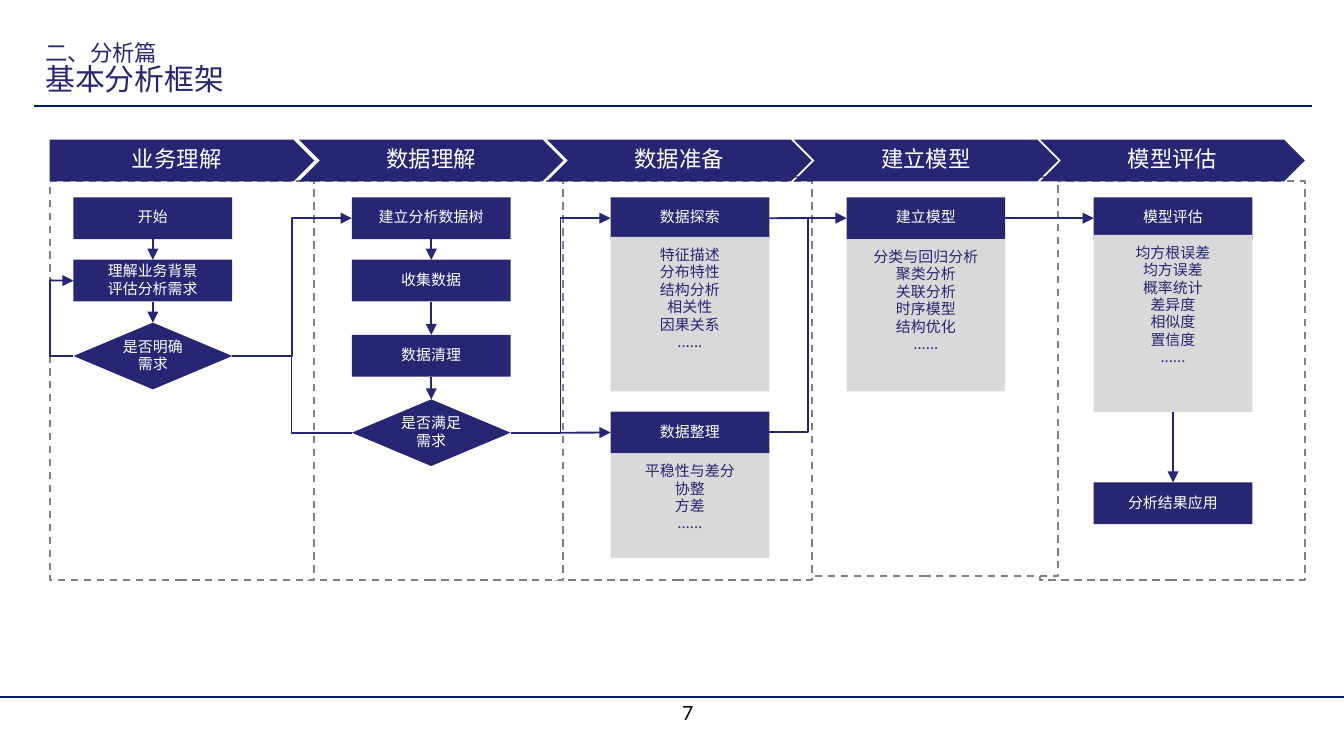
from lxml import etree
from pptx import Presentation
from pptx.dml.color import RGBColor
from pptx.enum import dml, shapes, text
from pptx.oxml.ns import qn
from pptx.util import Cm, Pt

NAVY = RGBColor(0x26, 0x26, 0x73)
RULE = RGBColor(0x00, 0x20, 0x60)
DASH = RGBColor(0x80, 0x80, 0x80)
PANEL = RGBColor(0xD9, 0xD9, 0xD9)
WHITE = RGBColor(0xFF, 0xFF, 0xFF)
BLACK = RGBColor(0x00, 0x00, 0x00)
FONT = "Noto Sans CJK SC"
RECTANGLE = shapes.MSO_SHAPE.RECTANGLE
DIAMOND = shapes.MSO_SHAPE.DIAMOND
TOP, LEFT, BOTTOM, RIGHT = range(4)

TITLE = [("二、分析篇", 12), ("基本分析框架", 16)]
RULES = [(0, 25.4, 13.18), (0.64, 24.79, 2)]

STAGES = [
    ("业务理解", 0.94, 3.43, 1.39),
    ("数据理解", 5.65, 3.43, 6.65),
    ("数据准备", 10.34, 3.43, 11.54),
    ("建立模型", 15, 3.35, 16),
    ("模型评估", 19.66, 3.43, 20.67),
]
STAGE_WIDTH, STAGE_TOP, FRAME_HEIGHT = 5, 2.64, 7.54
STEP_WIDTH, STEP_HEIGHT, DECISION_HEIGHT = 3, 0.79, 1.26

STEPS = {
    "start": (0, 3.73, ["开始"]),
    "background": (0, 4.91, ["理解业务背景", "评估分析需求"]),
    "tree": (1, 3.73, ["建立分析数据树"]),
    "collect": (1, 4.91, ["收集数据"]),
    "clean": (1, 6.33, ["数据清理"]),
    "explore": (2, 3.73, ["数据探索"]),
    "tidy": (2, 7.78, ["数据整理"]),
    "model": (3, 3.73, ["建立模型"]),
    "evaluate": (4, 3.73, ["模型评估"]),
    "apply": (4, 9.12, ["分析结果应用"]),
}
DECISIONS = {
    "clear": (0, 6.1, ["是否明确", "需求"]),
    "enough": (1, 7.55, ["是否满足", "需求"]),
}
DETAILS = {
    "explore list": (2, 4.48, 2.92, ["特征描述", "分布特性", "结构分析", "相关性", "因果关系", "......"]),
    "tidy list": (2, 8.57, 1.98, ["平稳性与差分", "协整", "方差", "......"]),
    "model list": (3, 4.52, 2.88, ["分类与回归分析", "聚类分析", "关联分析", "时序模型", "结构优化", "......"]),
    "evaluate list": (4, 4.44, 3.35, ["均方根误差", "均方误差", "概率统计", "差异度", "相似度", "置信度", "......"]),
}

LOOP, FORK, SPLIT = (0.94, 5.3), (5.51, 6.73), (10.59, 8.18)
FLOWS = [
    ("start", BOTTOM, "background", TOP),
    ("background", BOTTOM, "clear", TOP),
    ("tree", BOTTOM, "collect", TOP),
    ("collect", BOTTOM, "clean", TOP),
    ("clean", BOTTOM, "enough", TOP),
    ("model", RIGHT, "evaluate", LEFT),
    ("evaluate list", BOTTOM, "apply", TOP),
    (LOOP, None, "background", LEFT),
    (SPLIT, None, "tidy", LEFT),
]
ELBOWS = [
    ("clear", RIGHT, "tree", LEFT),
    ("enough", RIGHT, "explore", LEFT),
    ("tidy", RIGHT, "model", LEFT),
]
CORNERS = [(LOOP, None, "clear", LEFT), (FORK, None, "enough", LEFT)]


def style(paragraph, size, color, name=FONT):
    font = paragraph.font
    font.name, font.size, font.color.rgb = name, Pt(size), color
    properties = paragraph._p.pPr.find(qn("a:defRPr"))
    etree.SubElement(properties, qn("a:ea"), typeface=name)


def add_block(kind, left, top, width, height, lines=(), fill=NAVY, color=WHITE,
              size=8, inset=0, anchor=text.MSO_ANCHOR.MIDDLE):
    shape = slide.shapes.add_shape(kind, Cm(left), Cm(top), Cm(width), Cm(height))
    shape.shadow.inherit = False
    shape.fill.solid()
    shape.fill.fore_color.rgb = fill
    shape.line.fill.background()
    frame = shape.text_frame
    frame.margin_left = frame.margin_right = Cm(inset)
    frame.margin_top = frame.margin_bottom = Cm(inset)
    frame.vertical_anchor = anchor
    for index, line in enumerate(lines):
        paragraph = frame.add_paragraph() if index else frame.paragraphs[0]
        paragraph.text = line
        paragraph.alignment = text.PP_ALIGN.CENTER
        paragraph.line_spacing = 0.9
        if index:
            paragraph.space_before = Pt(0.7)
        style(paragraph, size, color)
    return shape


def add_textbox(left, top, width, height):
    frame = slide.shapes.add_textbox(Cm(left), Cm(top), Cm(width), Cm(height)).text_frame
    frame.word_wrap = True
    frame.vertical_anchor = text.MSO_ANCHOR.BOTTOM
    return frame.paragraphs[0]


def add_line(start, end, kind=shapes.MSO_CONNECTOR.STRAIGHT, color=NAVY, arrow=False):
    line = slide.shapes.add_connector(kind, *map(Cm, start + end))
    line.line.color.rgb = color
    line.line.width = Pt(1)
    if arrow:
        etree.SubElement(line.line._get_or_add_ln(), qn("a:tailEnd"), type="triangle")
    etree.SubElement(line._element.spPr, qn("a:effectLst"))
    return line


def add_flow(source, source_side, target, target_side, **options):
    start = (0, 0) if source in blocks else source
    line = add_line(start, (1, 1), **options)
    if source in blocks:
        line.begin_connect(blocks[source], source_side)
    line.end_connect(blocks[target], target_side)
    return line


presentation = Presentation()
presentation.slide_width, presentation.slide_height = Cm(25.4), Cm(14.29)
slide = presentation.slides.add_slide(presentation.slide_layouts[6])

for left, right, height in RULES:
    add_line((left, height), (right, height), color=RULE)

for name, left, top, step_left in reversed(STAGES):
    frame = add_block(RECTANGLE, left, top, STAGE_WIDTH, FRAME_HEIGHT, fill=WHITE)
    frame.line.color.rgb = DASH
    frame.line.width = Pt(1)
    frame.line.dash_style = dml.MSO_LINE.DASH

title = add_textbox(0.61, 0.38, 21.13, 1.57)
title.line_spacing = 0.85
style(title, 16, NAVY)
for index, (words, size) in enumerate(TITLE):
    if index:
        title.add_line_break()
    run = title.add_run()
    run.text = words
    run.font.size = Pt(size)

page_number = add_textbox(10.36, 13.18, 5.28, 0.64)
page_number.text = "7"
page_number.alignment = text.PP_ALIGN.CENTER
style(page_number, 10.5, BLACK, "Lato")

for index, (name, left, top, step_left) in enumerate(STAGES):
    kind = shapes.MSO_SHAPE.CHEVRON if index else shapes.MSO_SHAPE.PENTAGON
    add_block(kind, left, STAGE_TOP, STAGE_WIDTH, STEP_HEIGHT, [name], size=12)

blocks = {}
for group, kind, height in ((STEPS, RECTANGLE, STEP_HEIGHT), (DECISIONS, DIAMOND, DECISION_HEIGHT)):
    for key, (stage, top, lines) in group.items():
        blocks[key] = add_block(kind, STAGES[stage][3], top, STEP_WIDTH, height, lines)
for key, (stage, top, height, lines) in DETAILS.items():
    blocks[key] = add_block(RECTANGLE, STAGES[stage][3], top, STEP_WIDTH, height, lines,
                            PANEL, NAVY, inset=0.2, anchor=text.MSO_ANCHOR.TOP)

for flow in FLOWS:
    add_flow(*flow, arrow=True)
for flow in ELBOWS:
    add_flow(*flow, kind=shapes.MSO_CONNECTOR.ELBOW, arrow=True)
for flow in CORNERS:
    corner = add_flow(*flow, kind=shapes.MSO_CONNECTOR.ELBOW)
    guides = corner._element.spPr.find(qn("a:prstGeom")).get_or_add_avLst()
    etree.SubElement(guides, qn("a:gd"), name="adj1", fmla="val 0")
explore_exit = add_line((14.54, 4.12), (15.34, 4.12))
explore_exit.begin_connect(blocks["explore"], RIGHT)

presentation.save("out.pptx")
